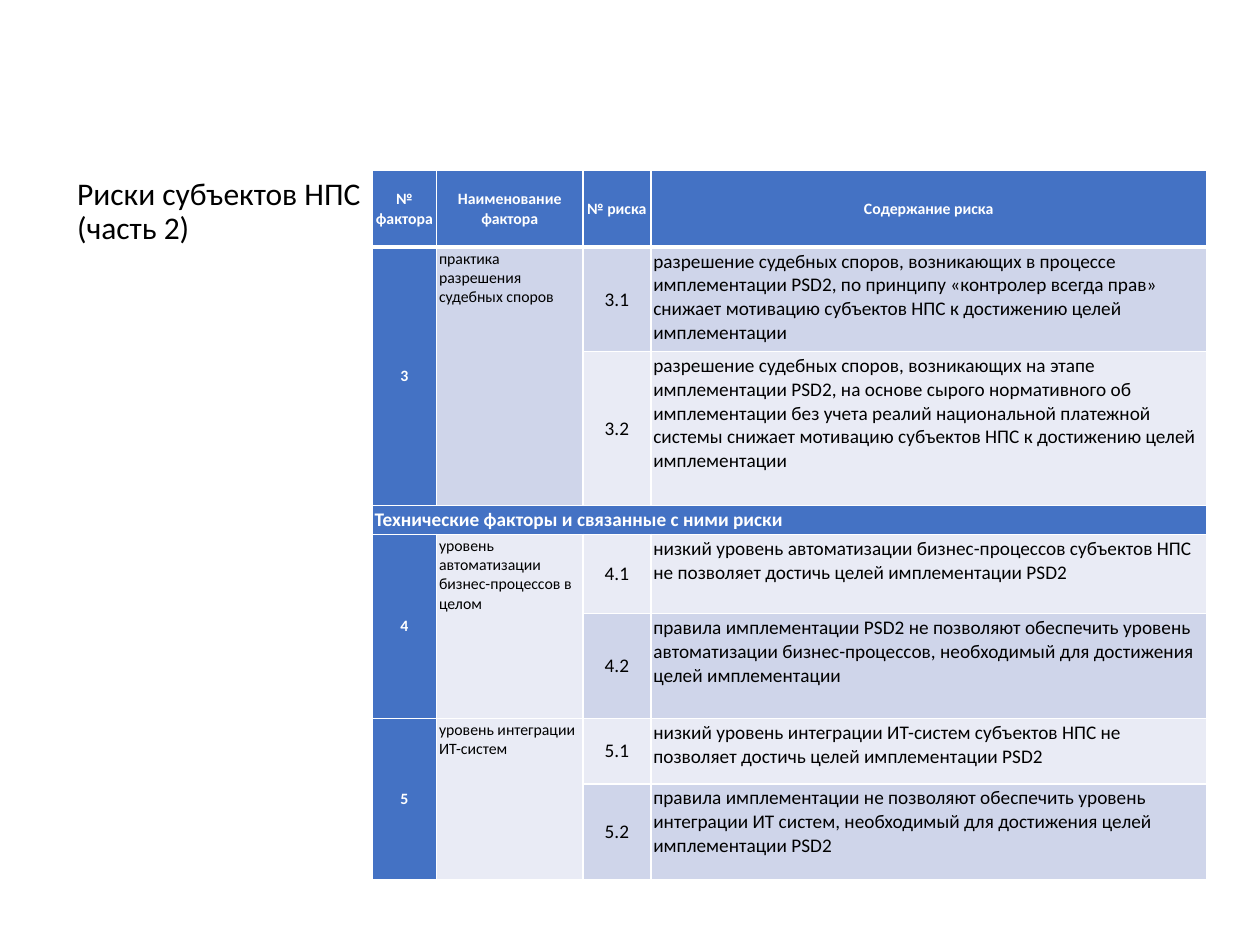
from lxml.etree import SubElement
from pptx import Presentation
from pptx.dml.color import RGBColor
from pptx.enum.text import MSO_ANCHOR as Anchor, PP_ALIGN as Align
from pptx.oxml.ns import qn
from pptx.util import Cm, Pt

COLORS = {"header": "4472C4", "dark band": "CFD5EA", "light band": "E9EBF5",
          "white": "FFFFFF", "black": "000000"}
FONT = "Calibri"
HEADINGS = ["№ фактора", "Наименование фактора", "№ риска", "Содержание риска"]
SECTION = "Технические факторы и связанные с ними риски"
RISKS = [
    HEADINGS,
    ["3", "практика разрешения судебных споров", "3.1",
     "разрешение судебных споров, возникающих в процессе имплементации PSD2, по принципу "
     "«контролер всегда прав» снижает мотивацию субъектов НПС к достижению целей имплементации"],
    ["", "", "3.2",
     "разрешение судебных споров, возникающих на этапе имплементации PSD2, на основе сырого "
     "нормативного об имплементации без учета реалий национальной платежной системы снижает "
     "мотивацию субъектов НПС к достижению целей имплементации"],
    [SECTION, "", "", ""],
    ["4", "уровень автоматизации бизнес-процессов в целом", "4.1",
     "низкий уровень автоматизации бизнес-процессов субъектов НПС не позволяет достичь целей "
     "имплементации PSD2"],
    ["", "", "4.2",
     "правила имплементации PSD2 не позволяют обеспечить уровень автоматизации "
     "бизнес-процессов, необходимый для достижения целей имплементации"],
    ["5", "уровень интеграции ИТ-систем", "5.1",
     "низкий уровень интеграции ИТ-систем субъектов НПС не позволяет достичь целей "
     "имплементации PSD2"],
    ["", "", "5.2",
     "правила имплементации не позволяют обеспечить уровень интеграции ИТ систем, необходимый "
     "для достижения целей имплементации PSD2"],
]
COLUMN_WIDTHS = [1.3, 2.95, 1.37, 11.2]
ROW_HEIGHTS = [1.55, 2.11, 3.1, 0.58, 1.6, 2.11, 1.32, 1.93]
SECTION_ROW = 3
FACTOR_ROWS = [1, 4, 6]


def style_text(paragraph, size, color, bold=False):
    for run in paragraph.runs:
        run.font.name = FONT
        run.font.size = Pt(size)
        run.font.bold = bold
        run.font.color.rgb = RGBColor.from_string(COLORS[color])


def add_border(cell, side, width):
    line = SubElement(cell._tc.get_or_add_tcPr(), qn(f"a:{side}"), w=str(Pt(width)))
    fill = SubElement(line, qn("a:solidFill"))
    SubElement(fill, qn("a:srgbClr"), val=COLORS["white"])


prs = Presentation()
prs.slide_width, prs.slide_height = Cm(25.4), Cm(19.05)
slide = prs.slides.add_slide(prs.slide_layouts[5])

title = slide.shapes.title
title.left, title.top, title.width, title.height = Cm(1.3), Cm(3.15), Cm(19.63), Cm(2.26)
title.text_frame.text = "Риски субъектов НПС\v(часть 2)"
title.text_frame.vertical_anchor = Anchor.MIDDLE
heading = title.text_frame.paragraphs[0]
heading.alignment = Align.LEFT
heading.line_spacing = 0.9
style_text(heading, 18, "black")

risk_table = slide.shapes.add_table(
    len(RISKS), len(HEADINGS), Cm(7.5), Cm(3.43),
    Cm(sum(COLUMN_WIDTHS)), Cm(sum(ROW_HEIGHTS))).table
for column, width in zip(risk_table.columns, COLUMN_WIDTHS):
    column.width = Cm(width)
for row, height in zip(risk_table.rows, ROW_HEIGHTS):
    row.height = Cm(height)

for r, risk in enumerate(RISKS):
    for c, wording in enumerate(risk):
        cell = risk_table.cell(r, c)
        is_heading = r in (0, SECTION_ROW) or c == 0
        cell.margin_left = cell.margin_right = Cm(0.05)
        cell.margin_top = cell.margin_bottom = Cm(0.05)
        cell.vertical_anchor = Anchor.MIDDLE if is_heading or c == 2 else Anchor.TOP
        add_border(cell, "lnL", 1)
        add_border(cell, "lnR", 1)
        add_border(cell, "lnT", 3 if r == 1 else 1)
        add_border(cell, "lnB", 3 if r == 0 else 1)

        band = "dark band" if r % 2 else "light band"
        cell.fill.solid()
        cell.fill.fore_color.rgb = RGBColor.from_string(COLORS["header" if is_heading else band])

        cell.text_frame.text = wording
        paragraph = cell.text_frame.paragraphs[0]
        centred = r == 0 or (r != SECTION_ROW and c in (0, 2))
        paragraph.alignment = Align.CENTER if centred else Align.LEFT
        if r == 0:
            paragraph.line_spacing = 1.07
        size = 11 if r == SECTION_ROW or (r > 0 and c >= 2) else 9
        style_text(paragraph, size, "white" if is_heading else "black", is_heading)

for r in FACTOR_ROWS:
    for c in (0, 1):
        risk_table.cell(r, c).merge(risk_table.cell(r + 1, c))
risk_table.cell(SECTION_ROW, 0).merge(risk_table.cell(SECTION_ROW, len(HEADINGS) - 1))

prs.save("out.pptx")
